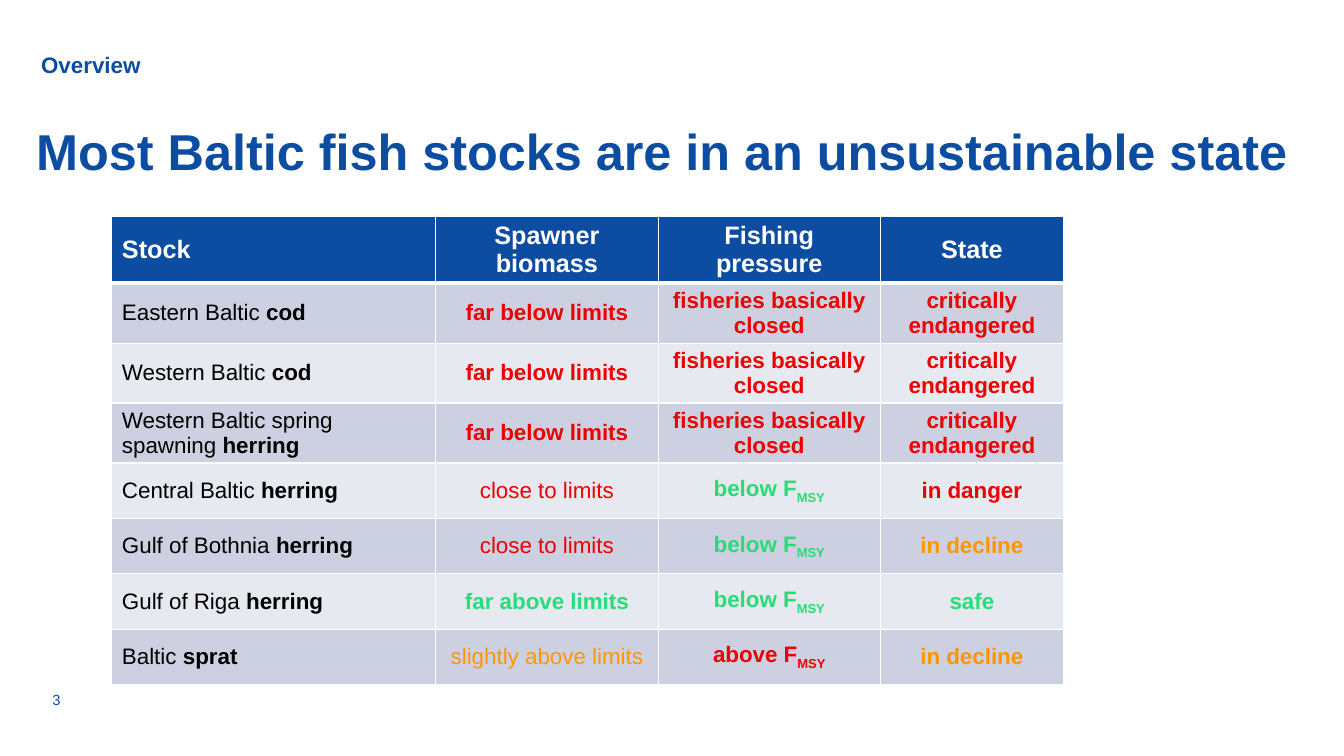
"""Build the slide on the state of Baltic fish stocks."""
from lxml.etree import SubElement
from pptx import Presentation
from pptx.dml.color import RGBColor
from pptx.enum.text import MSO_ANCHOR, PP_ALIGN
from pptx.oxml.ns import qn
from pptx.util import Inches, Pt

INK = {"blue": "0C4DA2", "white": "FFFFFF", "black": "000000", "red": "ED0000",
       "green": "28DC78", "orange": "FF9600", "dark": "CCD0E0", "light": "E7E9F0"}


def write(para, text, ink, size, bold=True):
    """Add one run of text and return it."""
    run = para.add_run()
    run.text = text
    form = {"name": "Arial", "size": Pt(size), "bold": bold}
    for key, value in form.items():
        setattr(run.font, key, value)
    run.font.color.rgb = RGBColor.from_string(INK[ink])
    return run


def paint(cell, fill, top, base):
    """Give a cell its white borders, fill and anchor."""
    props = cell._tc.get_or_add_tcPr()
    for side, width in {"L": 1, "R": 1, "T": top, "B": base}.items():
        line = SubElement(props, qn(f"a:ln{side}"), w=str(Pt(width)))
        solid = SubElement(line, qn("a:solidFill"))
        SubElement(solid, qn("a:srgbClr"), val=INK["white"])
    cell.fill.solid()
    cell.fill.fore_color.rgb = RGBColor.from_string(INK[fill])
    cell.vertical_anchor = MSO_ANCHOR.MIDDLE


deck = Presentation()
deck.slide_width, deck.slide_height = Inches(13.33), Inches(7.5)
slide = deck.slides.add_slide(deck.slide_layouts[6])

HEADS = ["Stock", "Spawner biomass", "Fishing pressure", "State"]
FAR = ("far below limits", "red", True)
CLOSE = ("close to limits", "red", False)
SHUT = ("fisheries basically closed", "red", True)
BELOW = ("below F", "green", True)
GRAVE = ("critically endangered", "red", True)
FALL = ("in decline", "orange", True)
STOCKS = [
    ("Eastern Baltic ", "cod", FAR, SHUT, GRAVE),
    ("Western Baltic ", "cod", FAR, SHUT, GRAVE),
    ("Western Baltic spring spawning ", "herring", FAR, SHUT, GRAVE),
    ("Central Baltic ", "herring", CLOSE, BELOW, ("in danger", "red", True)),
    ("Gulf of Bothnia ", "herring", CLOSE, BELOW, FALL),
    ("Gulf of Riga ", "herring", ("far above limits", "green", True), BELOW,
     ("safe", "green", True)),
    ("Baltic ", "sprat", ("slightly above limits", "orange", False),
     ("above F", "red", True), FALL),
]

frame = slide.shapes.add_table(len(STOCKS) + 1, len(HEADS), Inches(1.11),
                               Inches(2.15), Inches(9.44), Inches(4.51))
table = frame.table
for col, width in zip(table.columns, [3.21, 2.21, 2.2, 1.82]):
    col.width = Inches(width)
for num, row in enumerate(table.rows):
    row.height = Inches(0.55 if num else 0.66)
    for pos, cell in enumerate(row.cells):
        fill = ("light", "dark")[num % 2] if num else "blue"
        paint(cell, fill, 3 if num == 1 else 1, 1 if num else 3)
        para = cell.text_frame.paragraphs[0]
        para.alignment = PP_ALIGN.CENTER if pos else PP_ALIGN.LEFT
        if num == 0:
            write(para, HEADS[pos], "white", 18)
            continue
        area, fish, *marks = STOCKS[num - 1]
        if pos == 0:
            write(para, area, "black", 16, False)
            write(para, fish, "black", 16)
            continue
        text, ink, bold = marks[pos - 1]
        write(para, text, ink, 16, bold)
        if text.endswith(" F"):
            sub = write(para, "MSY", ink, 16)
            sub._r.get_or_add_rPr().set("baseline", "-25000")

TEXTS = [
    ("3", 10.5, False, (0.52, 6.74, 0.81, 0.4), 0, MSO_ANCHOR.MIDDLE, 1),
    ("Most Baltic fish stocks are in an unsustainable state", 36, True,
     (0.36, 1.26, 12.46, 0.89), 0, MSO_ANCHOR.TOP, 0.9),
    ("Overview", 16, True, (0.31, 0.46, 6.06, 0.4), 1, MSO_ANCHOR.TOP, 1),
]
for text, size, bold, place, pad, anchor, space in TEXTS:
    box = slide.shapes.add_textbox(*map(Inches, place)).text_frame
    form = {"word_wrap": True, "vertical_anchor": anchor,
            "margin_left": Inches(0.1 * pad), "margin_right": Inches(0.1 * pad),
            "margin_top": Inches(0.05 * pad), "margin_bottom": Inches(0.05 * pad)}
    for key, value in form.items():
        setattr(box, key, value)
    para = box.paragraphs[0]
    para.line_spacing = space
    write(para, text, "blue", size, bold)

deck.save("out.pptx")
